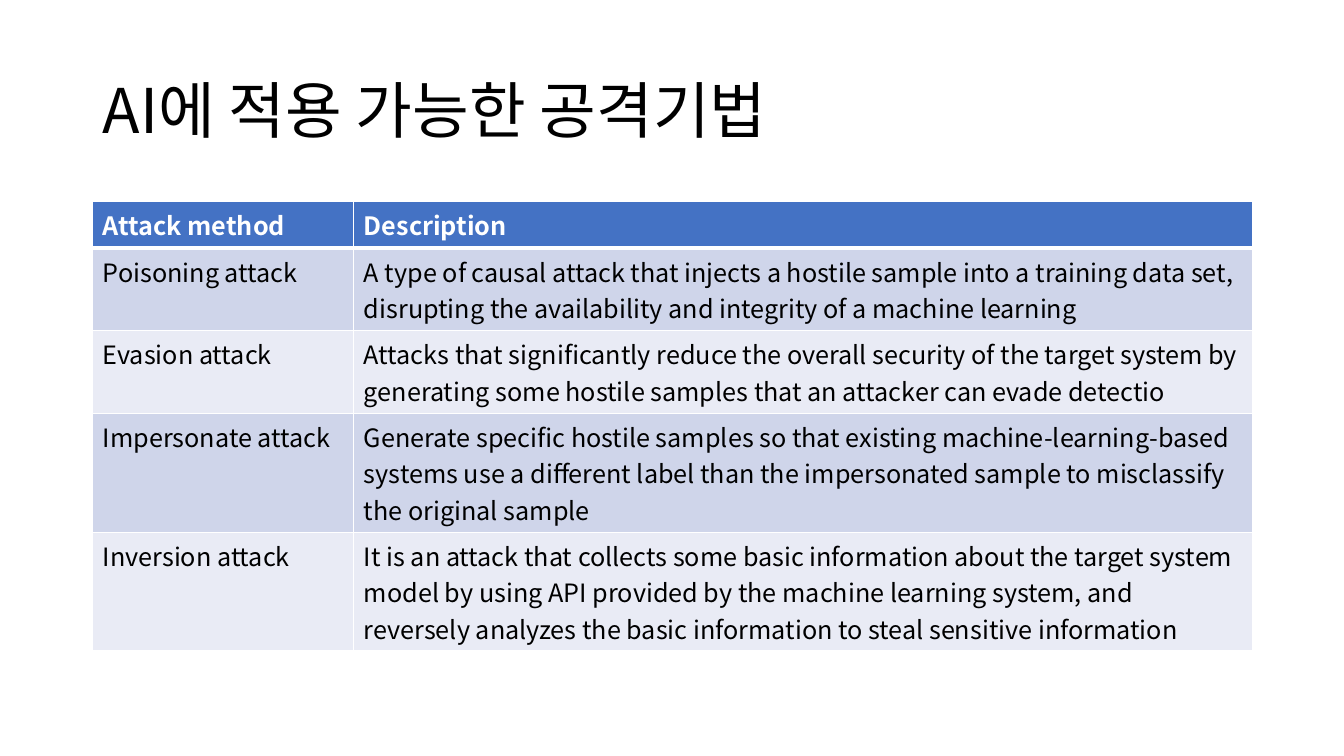
from lxml.etree import SubElement
from pptx import Presentation
from pptx.dml.color import RGBColor
from pptx.enum.text import MSO_ANCHOR as Anchor
from pptx.oxml.ns import qn
from pptx.util import Inches, Pt

FONT = "Noto Sans CJK KR"
WHITE, BLACK, BLUE = "FFFFFF", "000000", "4472C4"
BANDS = ["CFD5EA", "E9EBF5"]
PAD, LINE = 0.1, 0.36

TITLE = "AI에 적용 가능한 공격기법"
# Lines of text in the row, method, description
ROWS = [
    (1, "Attack method", "Description"),
    (2, "Poisoning attack",
     "A type of causal attack that injects a hostile sample into a training "
     "data set, disrupting the availability and integrity of a machine learning"),
    (2, "Evasion attack",
     "Attacks that significantly reduce the overall security of the target "
     "system by generating some hostile samples that an attacker can evade detectio"),
    (3, "Impersonate attack",
     "Generate specific hostile samples so that existing machine-learning-based "
     "systems use a different label than the impersonated sample to misclassify "
     "the original sample"),
    (3, "Inversion attack",
     "It is an attack that collects some basic information about the target "
     "system model by using API provided by the machine learning system, and "
     "reversely analyzes the basic information to steal sensitive information"),
]


def color(value):
    return RGBColor.from_string(value)


def write(frame, text, size, ink, bold=False):
    """Fill a text frame with one paragraph."""
    para = frame.paragraphs[0]
    para.text = text
    font = para.font
    font.size, font.bold, font.name = Pt(size), bold, FONT
    font.color.rgb = color(ink)
    return para


def edge(cell, side, width):
    """Draw one white border; call before the cell gets its fill."""
    line = SubElement(cell._tc.get_or_add_tcPr(), qn("a:ln" + side),
                      w=str(Pt(width)))
    fill = SubElement(line, qn("a:solidFill"))
    SubElement(fill, qn("a:srgbClr"), val=WHITE)


def add_title(slide, left, top, width, height):
    box = slide.shapes.add_textbox(
        Inches(left), Inches(top), Inches(width), Inches(height))
    frame = box.text_frame
    frame.word_wrap = True
    frame.vertical_anchor = Anchor.MIDDLE
    write(frame, TITLE, 44, BLACK).line_spacing = 0.9


def add_attacks(slide, left, top, width, first_w=2.59):
    heights = [PAD + LINE * lines for lines, *_ in ROWS]
    frame = slide.shapes.add_table(
        len(ROWS), 2, Inches(left), Inches(top),
        Inches(width), Inches(sum(heights)))
    table = frame.table
    for col, size in zip(table.columns, (first_w, width - first_w)):
        col.width = Inches(size)
    for r, (_, *texts) in enumerate(ROWS):
        table.rows[r].height = Inches(heights[r])
        head = r == 0
        thick = {0: "B", 1: "T"}.get(r)
        for c, text in enumerate(texts):
            cell = table.cell(r, c)
            for side in "LRTB":
                edge(cell, side, 3 if side == thick else 1)
            cell.fill.solid()
            cell.fill.fore_color.rgb = color(BLUE if head else BANDS[(r - 1) % 2])
            write(cell.text_frame, text, 18, WHITE if head else BLACK, head)


def main():
    deck = Presentation()
    deck.slide_width, deck.slide_height = Inches(13.33), Inches(7.5)
    slide = deck.slides.add_slide(deck.slide_layouts[6])
    add_title(slide, 0.92, 0.4, 11.5, 1.45)
    add_attacks(slide, 0.92, 2, 11.5)
    deck.save("out.pptx")


if __name__ == "__main__":
    main()
